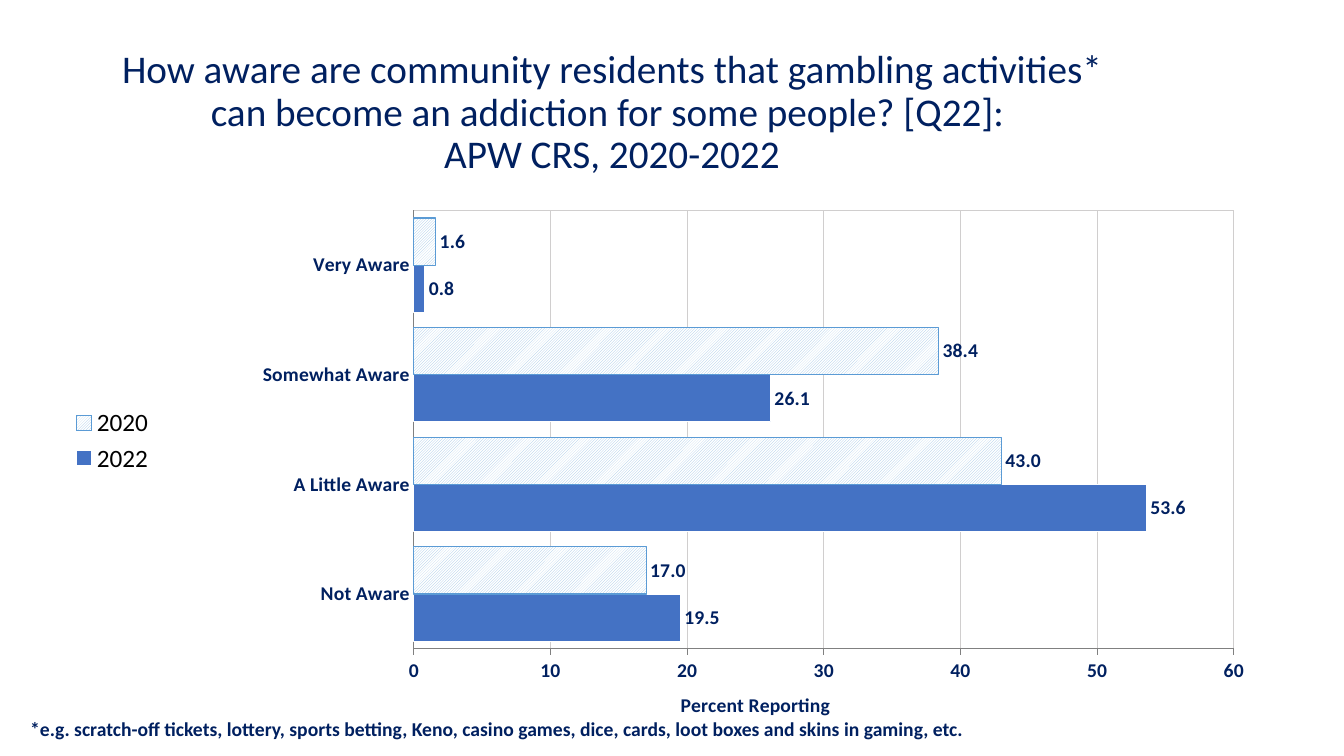
from lxml import etree
from pptx import Presentation
from pptx.chart.data import CategoryChartData
from pptx.dml.color import RGBColor
from pptx.enum.chart import XL_CHART_TYPE as ChartType, XL_LABEL_POSITION as LabelPosition
from pptx.enum.chart import XL_LEGEND_POSITION as LegendPosition, XL_TICK_MARK as TickMark
from pptx.enum.dml import MSO_PATTERN as Pattern
from pptx.enum.text import MSO_ANCHOR as Anchor, PP_ALIGN as Align
from pptx.oxml import parse_xml
from pptx.oxml.ns import nsdecls, qn
from pptx.util import Cm, Pt

COLORS = {"navy": "002060", "black": "000000", "white": "FFFFFF", "bar": "4472C4",
          "hatch": "9DC3E6", "outline": "5B9BD5", "grid": "D0CECE", "axis": "808080"}
LEVELS = ["Not Aware", "A Little Aware", "Somewhat Aware", "Very Aware"]
SHARES = {"2022": (19.5, 53.6, 26.1, 0.8), "2020": (17.0, 43.0, 38.4, 1.6)}


def color(name):
    return RGBColor.from_string(COLORS[name])


def manual_layout(target=None, **fractions):
    """Build a c:layout element from fractions of the chart's size."""
    layout = parse_xml(f"<c:layout {nsdecls('c')}/>")
    manual = etree.SubElement(layout, qn("c:manualLayout"))
    settings = {"layoutTarget": target} if target else {}
    settings.update(xMode="edge", yMode="edge", **fractions)
    for tag, value in settings.items():
        etree.SubElement(manual, qn(f"c:{tag}")).set("val", str(value))
    return layout


class SurveySlide:
    font_name = "Calibri"

    def __init__(self, deck):
        self.page = deck.slides.add_slide(deck.slide_layouts[6])

    def style(self, font, size, name="navy", bold=False):
        font.name, font.size, font.bold = self.font_name, Pt(size), bold
        font.color.rgb = color(name)

    def text(self, words, place, size, bold=False, align=Align.LEFT, anchor=Anchor.TOP, spacing=1.0):
        box = self.page.shapes.add_textbox(*map(Cm, place))
        frame = box.text_frame
        frame.word_wrap, frame.vertical_anchor = True, anchor
        frame.text = words
        for para in frame.paragraphs:
            para.alignment, para.line_spacing = align, spacing
            for span in para.runs:
                self.style(span.font, size, bold=bold)

    def bar_chart(self, categories, series, place):
        data = CategoryChartData(number_format="0.0")
        data.categories = categories
        for name, values in series.items():
            data.add_series(name, values)
        frame = self.page.shapes.add_chart(ChartType.BAR_CLUSTERED, *map(Cm, place), data)
        chart = frame.chart
        self.style(chart.font, 18, "black")
        chart.has_title = False
        chart.has_legend = True
        chart.legend.position = LegendPosition.LEFT
        chart.legend.include_in_layout = False
        plot = chart.plots[0]
        plot.gap_width, plot.overlap, plot.vary_by_categories = 33, 0, False
        for bars in plot.series:
            self.data_labels(bars)
        return chart

    def data_labels(self, bars):
        labels = bars.data_labels
        labels.show_value = True
        labels.number_format, labels.number_format_is_linked = "0.0", False
        labels.position = LabelPosition.OUTSIDE_END
        self.style(labels.font, 14, bold=True)

    def axes(self, chart, title, maximum, step):
        for axis, tick in ((chart.category_axis, TickMark.NONE), (chart.value_axis, TickMark.OUTSIDE)):
            axis.major_tick_mark, axis.minor_tick_mark = tick, TickMark.NONE
            axis.format.line.color.rgb = color("axis")
            axis.format.line.width = Pt(0.75)
            self.style(axis.tick_labels.font, 14, bold=True)
        axis = chart.value_axis
        axis.minimum_scale, axis.maximum_scale, axis.major_unit = 0, maximum, step
        axis.tick_labels.number_format = "0"
        axis.tick_labels.number_format_is_linked = False
        axis.has_major_gridlines = True
        axis.major_gridlines.format.line.color.rgb = color("grid")
        axis.major_gridlines.format.line.width = Pt(0.75)
        frame = axis.axis_title.text_frame
        frame.text = title
        self.style(frame.paragraphs[0].runs[0].font, 14, bold=True)

    def arrange(self, chart):
        """Fix the plot area and the value axis title in place, and frame the plot."""
        area = chart._chartSpace.find(".//" + qn("c:plotArea"))
        for old in area.findall(qn("c:layout")):
            area.remove(old)
        area.insert(0, manual_layout("inner", x=0.287, y=0.085, w=0.664, h=0.79))
        area.append(parse_xml(
            f'<c:spPr {nsdecls("c", "a")}><a:noFill/><a:ln w="9525"><a:solidFill>'
            f'<a:srgbClr val="{COLORS["grid"]}"/></a:solidFill></a:ln></c:spPr>'))
        title = area.find(qn("c:valAx")).find(qn("c:title"))
        for old in title.findall(qn("c:layout")):
            title.remove(old)
        title.find(qn("c:tx")).addnext(manual_layout(x=0.5, y=0.945))

    def paint(self, bars, fore, line, pattern=None):
        fill = bars.format.fill
        if pattern:
            fill.patterned()
            fill.pattern = pattern
            fill.back_color.rgb = color("white")
        else:
            fill.solid()
        fill.fore_color.rgb = color(fore)
        bars.format.line.color.rgb = color(line)
        bars.format.line.width = Pt(0.75)
        bars.invert_if_negative = False


def main():
    deck = Presentation()
    deck.slide_width, deck.slide_height = Cm(33.87), Cm(19.05)
    slide = SurveySlide(deck)
    slide.text("How aware are community residents that gambling activities* can become "
               "an addiction for some people? [Q22]: \vAPW CRS, 2020-2022",
               (2.34, 1.02, 26.16, 3.68), 28, align=Align.CENTER, anchor=Anchor.MIDDLE, spacing=0.9)
    chart = slide.bar_chart(LEVELS, SHARES, (1.5, 4.11, 31.12, 14.12))
    slide.axes(chart, "Percent Reporting", maximum=60, step=10)
    slide.arrange(chart)
    latest, earlier = chart.plots[0].series
    slide.paint(latest, "bar", "white")
    slide.paint(earlier, "hatch", "outline", Pattern.LIGHT_UPWARD_DIAGONAL)
    slide.text("*e.g. scratch-off tickets, lottery, sports betting, Keno, casino games, dice, cards, "
               "loot boxes and skins in gaming, etc.", (0.51, 17.93, 32.11, 0.86), 14, bold=True)
    deck.save("out.pptx")


if __name__ == "__main__":
    main()
